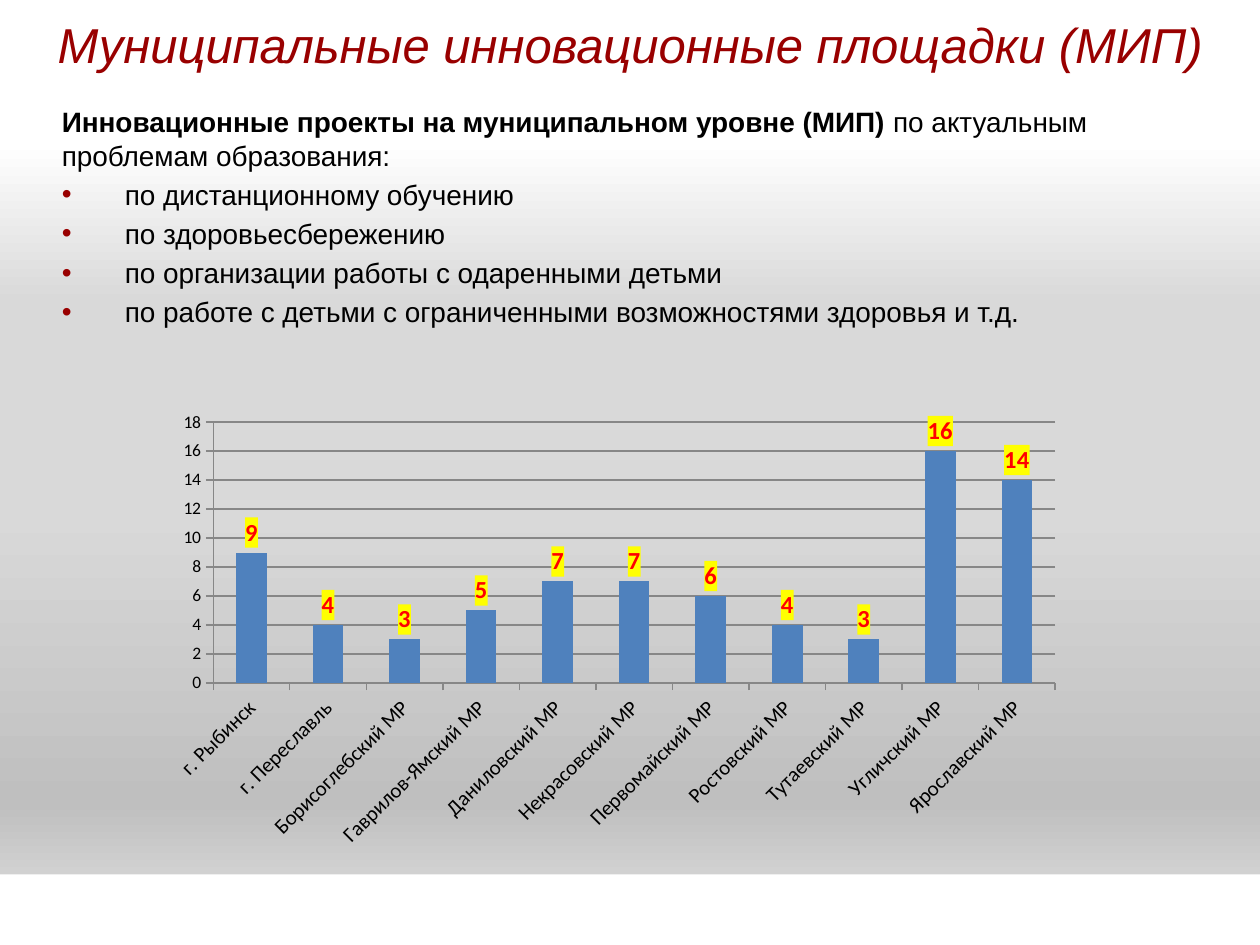
"""Build a slide on municipal innovation sites with a column chart by district."""
from lxml import etree
from pptx import Presentation
from pptx.chart.data import CategoryChartData
from pptx.dml.color import RGBColor
from pptx.enum.chart import XL_CHART_TYPE as ChartType, XL_LABEL_POSITION as LabelPosition
from pptx.enum.shapes import MSO_SHAPE as Preset
from pptx.enum.text import MSO_ANCHOR as Anchor, MSO_AUTO_SIZE as AutoSize, PP_ALIGN as Align
from pptx.oxml import parse_xml
from pptx.oxml.ns import nsdecls, qn
from pptx.util import Pt


def color(hex_code):
    return RGBColor.from_string(hex_code)


def place(part, left, top, width, height):
    part.left, part.top, part.width, part.height = Pt(left), Pt(top), Pt(width), Pt(height)


prs = Presentation()
prs.slide_width, prs.slide_height = Pt(720), Pt(540)
slide = prs.slides.add_slide(prs.slide_layouts[1])

backdrop = slide.background.fill
backdrop.gradient()
backdrop.gradient_angle = 270
stops = backdrop._fill._gradFill.find(qn("a:gsLst"))
for stop in list(stops):
    stops.remove(stop)
for percent, shade in [(0, "FFFFFF"), (15, "FFFFFF"), (32, "D9D9D9"),
                       (54, "D9D9D9"), (85, "BFBFBF"), (100, "E6E6E6")]:
    stops.append(parse_xml(f'<a:gs {nsdecls("a")} pos="{percent * 1000}">'
                           f'<a:srgbClr val="{shade}"/></a:gs>'))

footer = slide.shapes.add_shape(Preset.RECTANGLE, Pt(0), Pt(499.7), Pt(720.7), Pt(41.8))
footer.shadow.inherit = False
footer.fill.solid()
footer.fill.fore_color.rgb = color("FFFFFF")
footer.line.fill.background()
slide.shapes._spTree.insert(2, footer._element)

title = slide.shapes.title
place(title, 0, 0, 720, 50.4)
title.fill.solid()
title.fill.fore_color.rgb = color("FFFFFF")
title.text_frame.auto_size = AutoSize.NONE
title.text_frame.vertical_anchor = Anchor.MIDDLE
heading = title.text_frame.paragraphs[0]
heading.text = "Муниципальные инновационные площадки (МИП)"
heading.alignment = Align.CENTER
heading.font.name, heading.font.size, heading.font.italic = "Arial", Pt(28), True
heading.font.color.rgb = color("990000")

body = slide.placeholders[1]
place(body, 28.1, 56.2, 648, 356.4)
topics = body.text_frame
topics.auto_size = AutoSize.NONE
intro = topics.paragraphs[0]
lead = intro.add_run()
lead.text = "Инновационные проекты на муниципальном уровне (МИП)"
lead.font.bold = True
intro.add_run().text = " по актуальным проблемам образования:"
for topic in ["по дистанционному обучению", "по здоровьесбережению",
              "по организации работы с одаренными детьми",
              "по работе с детьми с ограниченными возможностями здоровья и т.д."]:
    topics.add_paragraph().text = topic
for index, paragraph in enumerate(topics.paragraphs):
    props = paragraph._p.get_or_add_pPr()
    indent = Pt(36) if index else 0
    props.set("marL", str(indent))
    props.set("indent", str(-indent))
    if index:
        bullet_color = etree.SubElement(props, qn("a:buClr"))
        etree.SubElement(bullet_color, qn("a:srgbClr"), val="990000")
        etree.SubElement(props, qn("a:buFont"), typeface="Arial")
        etree.SubElement(props, qn("a:buChar"), char="•")
    else:
        etree.SubElement(props, qn("a:buNone"))
    paragraph.space_before = Pt(3.2 if index else 0)
    paragraph.font.name, paragraph.font.size = "Arial", Pt(16)
    paragraph.font.color.rgb = color("000000")

projects = {"г. Рыбинск": 9, "г. Переславль": 4, "Борисоглебский МР": 3,
            "Гаврилов-Ямский МР": 5, "Даниловский МР": 7, "Некрасовский МР": 7,
            "Первомайский МР": 6, "Ростовский МР": 4, "Тутаевский МР": 3,
            "Угличский МР": 16, "Ярославский МР": 14}
data = CategoryChartData()
data.categories = list(projects)
data.add_series("Series 1", list(projects.values()))
chart = slide.shapes.add_chart(ChartType.COLUMN_CLUSTERED, Pt(90), Pt(230.4),
                               Pt(523.4), Pt(259.2), data).chart
chart.has_title = chart.has_legend = False
chart.font.name, chart.font.size = "Calibri", Pt(10)
chart.font.color.rgb = color("000000")

districts, counts = chart.category_axis, chart.value_axis
districts.tick_labels.font.size = Pt(12)
districts._element.find(qn("c:txPr")).find(qn("a:bodyPr")).set("rot", "-2700000")
counts.minimum_scale, counts.maximum_scale, counts.major_unit = 0, 18, 2
for rule in [districts.format.line, counts.format.line, counts.major_gridlines.format.line]:
    rule.width = Pt(0.75)
    rule.color.rgb = color("878787")

plot = chart.plots[0]
plot.gap_width = 150
plot.vary_by_categories = False
columns = plot.series[0]
columns.format.fill.solid()
columns.format.fill.fore_color.rgb = color("4F81BD")
labels = columns.data_labels
labels.show_value = True
labels.position = LabelPosition.OUTSIDE_END
labels.font.size, labels.font.bold = Pt(14), True
labels.font.color.rgb = color("FF0000")
labels._element.find(qn("c:txPr")).addprevious(parse_xml(
    f'<c:spPr {nsdecls("c", "a")}><a:solidFill><a:srgbClr val="FFFF00"/></a:solidFill></c:spPr>'))

prs.save("out.pptx")
